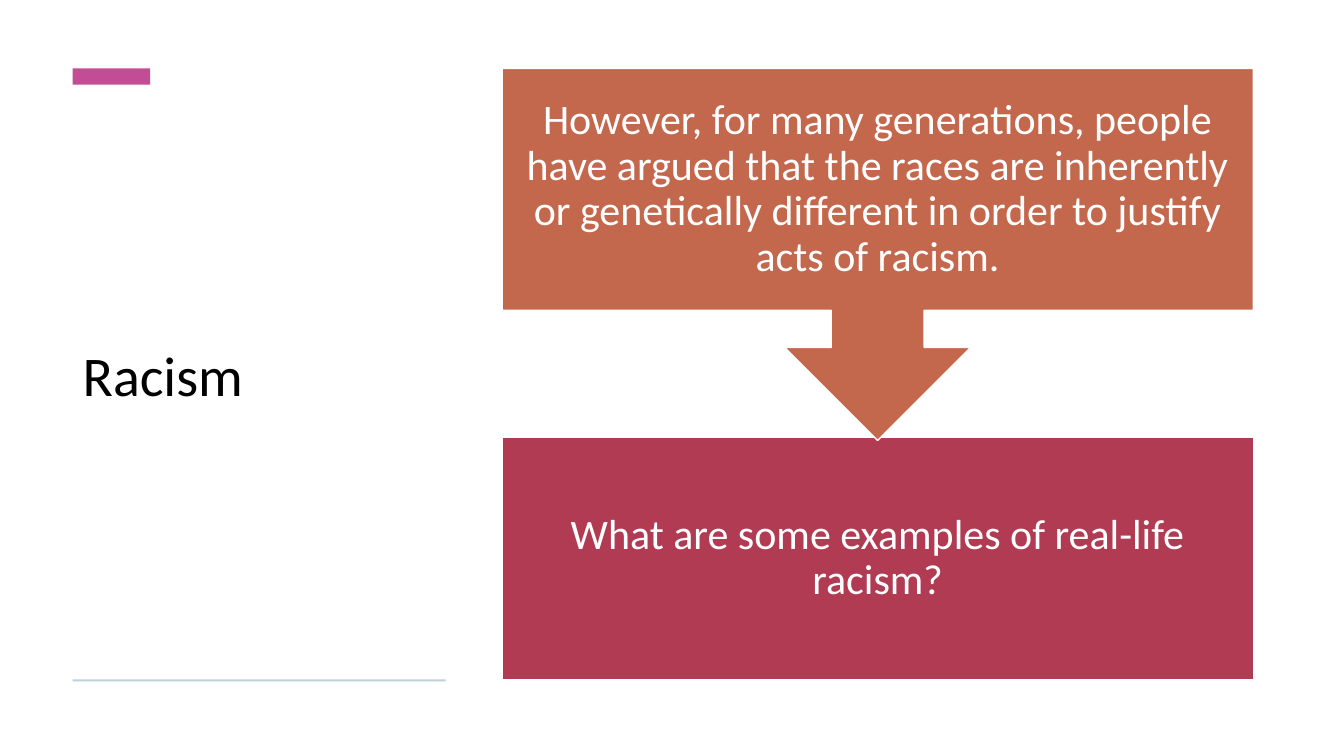
from dataclasses import dataclass

from pptx import Presentation
from pptx.dml.color import RGBColor
from pptx.enum.shapes import MSO_SHAPE
from pptx.enum.text import MSO_ANCHOR, MSO_AUTO_SIZE, PP_ALIGN
from pptx.util import Emu, Pt

EMU_PER_PX = 9144  # 100 px to the inch
FONT = "Calibri"
WHITE = "FFFFFF"
LEFT_MARGIN, LEFT_WIDTH = 72, 370
FLOW_LEFT, FLOW_WIDTH = 498, 745
BOX_INSET = 23


@dataclass(frozen=True)
class Block:
    left: int
    top: int
    width: int
    height: int
    fill: str
    kind: MSO_SHAPE = MSO_SHAPE.RECTANGLE
    text: str = ""


BLOCKS = [
    # Accent bar and bottom rule beside the title
    Block(LEFT_MARGIN, 68, 77, 16, "C34D95"),
    Block(LEFT_MARGIN, 674, LEFT_WIDTH, 2, "BDD0DB"),
    # Flow: the callout's tip overlaps the box below it
    Block(FLOW_LEFT, 434, FLOW_WIDTH, 240, "B13B52",
          text="What are some examples of real-life racism?"),
    Block(FLOW_LEFT, 68, FLOW_WIDTH, 369, "C3674D", MSO_SHAPE.DOWN_ARROW_CALLOUT,
          "However, for many generations, people have argued that the races are "
          "inherently or genetically different in order to justify acts of racism."),
]


def px(length: int) -> Emu:
    return Emu(length * EMU_PER_PX)


def color(value: str) -> RGBColor:
    return RGBColor.from_string(value)


def write_text(shape, text: str, size: int, text_color: str, align: PP_ALIGN) -> None:
    frame = shape.text_frame
    frame.text = text
    frame.word_wrap = True
    frame.auto_size = MSO_AUTO_SIZE.NONE
    frame.vertical_anchor = MSO_ANCHOR.MIDDLE
    paragraph = frame.paragraphs[0]
    paragraph.alignment = align
    paragraph.line_spacing = 0.9
    font = paragraph.runs[0].font
    font.name = FONT
    font.size = Pt(size)
    font.color.rgb = color(text_color)


def add_block(slide, block: Block) -> None:
    shape = slide.shapes.add_shape(block.kind, px(block.left), px(block.top),
                                   px(block.width), px(block.height))
    shape.shadow.inherit = False
    shape.fill.solid()
    shape.fill.fore_color.rgb = color(block.fill)
    if not block.text:
        shape.line.fill.background()
        return
    shape.line.color.rgb = color(WHITE)
    shape.line.width = Pt(1)
    write_text(shape, block.text, 30, WHITE, PP_ALIGN.CENTER)
    frame = shape.text_frame
    frame.margin_left = frame.margin_right = px(BOX_INSET)
    frame.margin_top = frame.margin_bottom = px(BOX_INSET)


def main() -> None:
    presentation = Presentation()
    presentation.slide_width, presentation.slide_height = px(1333), px(750)
    slide = presentation.slides.add_slide(presentation.slide_layouts[5])

    # Title
    title = slide.shapes.title
    title.left, title.top = px(LEFT_MARGIN), px(105)
    title.width, title.height = px(LEFT_WIDTH), px(541)
    write_text(title, "Racism", 40, "000000", PP_ALIGN.LEFT)

    for block in BLOCKS:
        add_block(slide, block)

    presentation.save("out.pptx")


if __name__ == "__main__":
    main()
